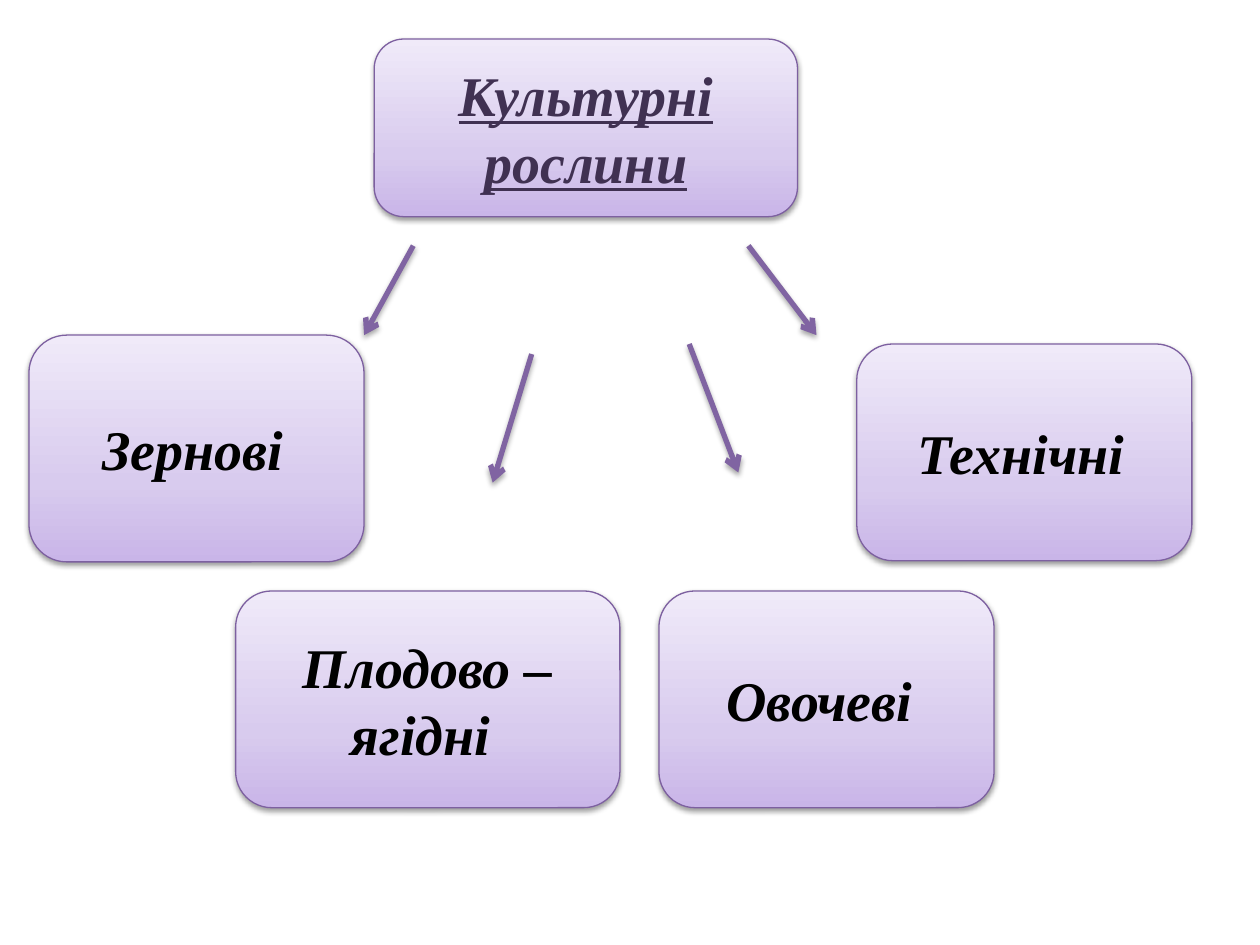
import copy

import pptx
import pptx.dml.color
import pptx.enum.shapes
import pptx.enum.text
import pptx.oxml
import pptx.oxml.ns
import pptx.util
from pptx.util import Inches

COLORS = {
    "bottom": "C9B5E8",
    "middle": "D8CBEE",
    "top": "F0EAF9",
    "border": "7D60A0",
    "arrow": "8064A2",
    "title": "403152",
    "text": "000000",
    "shadow": "000000",
}
GRADIENT = [(0, "bottom"), (0.35, "middle"), (1, "top")]

LABEL = {"name": "Times New Roman", "size": pptx.util.Pt(32), "bold": True, "italic": True}
TITLE = {**LABEL, "underline": True}
SMALL = {"name": "Calibri", "size": pptx.util.Pt(18), "bold": False, "italic": False}

# left, top, width, height, runs of (text, format, colour)
BOXES = [
    (2.97, 0.31, 3.36, 1.41, [("Культурні рослини", TITLE, "title")]),
    (0.23, 2.66, 2.66, 1.8, [("Зернові", LABEL, "text"), (" ", SMALL, "text")]),
    (1.87, 4.69, 3.05, 1.72, [("Плодово – ягідні ", LABEL, "text")]),
    (6.8, 2.73, 2.66, 1.72, [("Технічні", LABEL, "text"), (" ", SMALL, "text")]),
    (5.23, 4.69, 2.66, 1.72, [("Овочеві ", LABEL, "text")]),
]
# from x, from y, to x, to y
ARROWS = [
    (5.94, 1.95, 6.48, 2.66),
    (3.28, 1.95, 2.89, 2.66),
    (5.47, 2.73, 5.86, 3.75),
    (4.22, 2.81, 3.91, 3.83),
]


def rgb(name):
    return pptx.dml.color.RGBColor.from_string(COLORS[name])


def add_shadow(shape, distance, alpha):
    """Give the shape a soft shadow straight below it."""
    spPr = shape._element.spPr
    for old in spPr.findall(pptx.oxml.ns.qn("a:effectLst")):
        spPr.remove(old)
    spPr.append(pptx.oxml.parse_xml(
        f'<a:effectLst {pptx.oxml.ns.nsdecls("a")}>'
        f'<a:outerShdw blurRad="{pptx.util.Pt(3.1)}" dist="{pptx.util.Pt(distance)}"'
        ' dir="5400000" rotWithShape="0">'
        f'<a:srgbClr val="{COLORS["shadow"]}"><a:alpha val="{alpha * 1000}"/></a:srgbClr>'
        '</a:outerShdw></a:effectLst>'))


def fill_gradient(sp):
    sp.fill.gradient()
    sp.fill.gradient_angle = 90
    stops = sp._element.spPr.find(".//" + pptx.oxml.ns.qn("a:gsLst"))
    stops.insert(1, copy.deepcopy(stops[0]))
    for stop, (position, color) in zip(sp.fill.gradient_stops, GRADIENT):
        stop.position = position
        stop.color.rgb = rgb(color)


def add_box(s, left, top, width, height, runs):
    sp = s.shapes.add_shape(pptx.enum.shapes.MSO_SHAPE.ROUNDED_RECTANGLE,
                            Inches(left), Inches(top), Inches(width), Inches(height))
    fill_gradient(sp)
    sp.line.color.rgb = rgb("border")
    sp.line.width = pptx.util.Pt(0.75)
    add_shadow(sp, 1.6, 38)
    tf = sp.text_frame
    tf.word_wrap = True
    tf.vertical_anchor = pptx.enum.text.MSO_ANCHOR.MIDDLE
    p = tf.paragraphs[0]
    p.alignment = pptx.enum.text.PP_ALIGN.CENTER
    for text, values, color in runs:
        r = p.add_run()
        r.text = text
        r.font.color.rgb = rgb(color)
        for key, value in values.items():
            setattr(r.font, key, value)


def add_arrow(s, *ends):
    line = s.shapes.add_connector(pptx.enum.shapes.MSO_CONNECTOR.STRAIGHT,
                                  *(Inches(value) for value in ends))
    line.line.color.rgb = rgb("arrow")
    line.line.width = pptx.util.Pt(3)
    line.line._get_or_add_ln().append(pptx.oxml.parse_xml(
        f'<a:tailEnd {pptx.oxml.ns.nsdecls("a")} type="arrow"/>'))
    add_shadow(line, 1.8, 35)


def main():
    prs = pptx.Presentation()
    prs.slide_width, prs.slide_height = Inches(10), Inches(7.5)
    s = prs.slides.add_slide(prs.slide_layouts[6])
    for box in BOXES:
        add_box(s, *box)
    for arrow in ARROWS:
        add_arrow(s, *arrow)
    prs.save("out.pptx")


if __name__ == "__main__":
    main()
